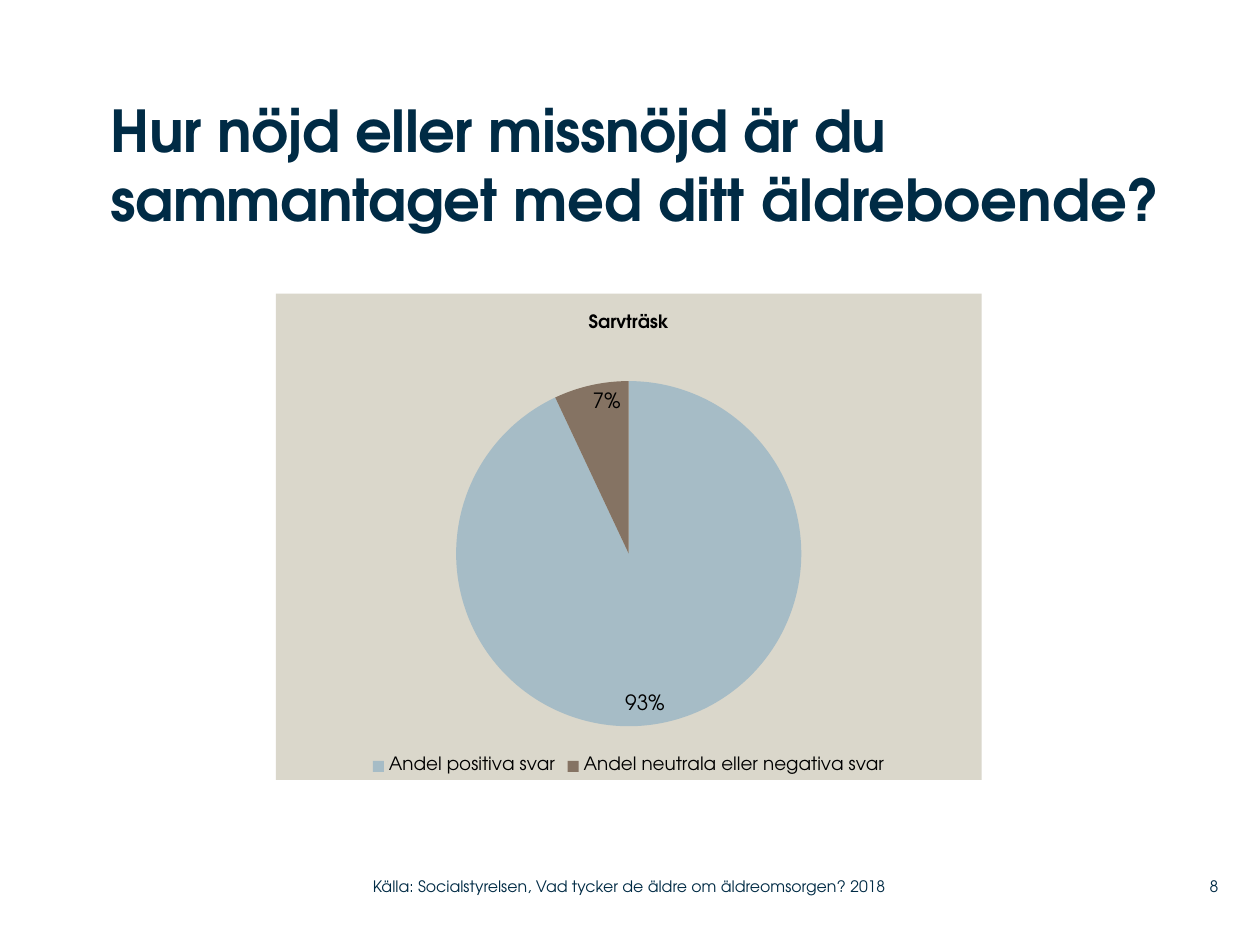
"""Build the slide on overall satisfaction with the care home."""
from dataclasses import dataclass

from lxml.etree import _Element
from pptx import Presentation
from pptx.chart.data import CategoryChartData
from pptx.dml.color import RGBColor
from pptx.enum.chart import XL_CHART_TYPE, XL_LABEL_POSITION, XL_LEGEND_POSITION
from pptx.enum.text import MSO_ANCHOR, MSO_AUTO_SIZE, PP_ALIGN
from pptx.oxml import parse_xml
from pptx.oxml.ns import nsdecls
from pptx.util import Inches, Pt

FONT = "TeX Gyre Adventor"
NAVY = RGBColor(0x00, 0x2B, 0x45)
BLACK = RGBColor(0x00, 0x00, 0x00)
BLUE = RGBColor(0xA6, 0xBC, 0xC6)
BROWN = RGBColor(0x85, 0x73, 0x63)
SAND = RGBColor(0xDA, 0xD7, 0xCB)


@dataclass
class Answer:
    label: str
    share: int
    color: RGBColor


@dataclass
class FooterItem:
    text: str
    left: float
    width: float
    align: PP_ALIGN


ANSWERS = [
    Answer("Andel positiva svar", 93, BLUE),
    Answer("Andel neutrala eller negativa svar", 7, BROWN),
]
FOOTER = [
    FooterItem("8", 9.2, 0.47, PP_ALIGN.RIGHT),
    FooterItem("Källa: Socialstyrelsen, Vad tycker de äldre om äldreomsorgen? 2018",
               2.96, 4.43, PP_ALIGN.LEFT),
]


def format_font(font, size: float, color: RGBColor, bold: bool = False) -> None:
    font.name = FONT
    font.size = Pt(size)
    font.bold = bold
    font.color.rgb = color


def add_run(p, text: str, *, size: float, color: RGBColor = NAVY,
            bold: bool = False, spacing: int = 0) -> None:
    r = p.add_run()
    r.text = text
    format_font(r.font, size, color, bold)
    if spacing:
        r.font._element.set("spc", str(spacing))


def prepare_frame(tf, anchor: MSO_ANCHOR, align: PP_ALIGN):
    tf.word_wrap = True
    tf.auto_size = MSO_AUTO_SIZE.NONE
    tf.margin_left = tf.margin_right = tf.margin_top = tf.margin_bottom = 0
    tf.vertical_anchor = anchor
    p = tf.paragraphs[0]
    p.alignment = align
    return p


def add_title(s) -> None:
    sp = s.shapes.title
    sp.left, sp.top = Inches(0.88), Inches(0.75)
    sp.width, sp.height = Inches(8.83), Inches(1.42)
    p = prepare_frame(sp.text_frame, MSO_ANCHOR.TOP, PP_ALIGN.LEFT)
    add_run(p, "Hur nöjd eller missnöjd är du sammantaget ",
            size=33, bold=True, spacing=-30)
    add_run(p, "med ditt äldreboende?", size=33, bold=True)


def add_footer(s, item: FooterItem) -> None:
    sp = s.shapes.add_textbox(Inches(item.left), Inches(6.89),
                              Inches(item.width), Inches(0.29))
    p = prepare_frame(sp.text_frame, MSO_ANCHOR.MIDDLE, item.align)
    add_run(p, item.text, size=9)


def plot_layout(x: float, y: float, w: float, h: float) -> _Element:
    return parse_xml(
        f'<c:layout {nsdecls("c")}><c:manualLayout><c:layoutTarget val="inner"/>'
        '<c:xMode val="edge"/><c:yMode val="edge"/>'
        f'<c:x val="{x}"/><c:y val="{y}"/><c:w val="{w}"/><c:h val="{h}"/>'
        '</c:manualLayout></c:layout>')


def chart_background(color: RGBColor) -> _Element:
    return parse_xml(
        f'<c:spPr {nsdecls("c", "a")}><a:solidFill><a:srgbClr val="{color}"/>'
        '</a:solidFill><a:ln><a:noFill/></a:ln></c:spPr>')


def add_pie(s, answers: list[Answer]) -> None:
    data = CategoryChartData()
    data.categories = [a.label for a in answers]
    data.add_series("Series 1", [a.share for a in answers])
    chart = s.shapes.add_chart(XL_CHART_TYPE.PIE, Inches(2.19), Inches(2.33),
                               Inches(5.6), Inches(3.86), data).chart
    format_font(chart.font, 18, BLACK)

    chart.has_title = True
    add_run(chart.chart_title.text_frame.paragraphs[0], "Sarvträsk",
            size=10.5, color=BLACK, bold=True)
    chart.chart_title.include_in_layout = False

    chart.has_legend = True
    chart.legend.position = XL_LEGEND_POSITION.BOTTOM
    chart.legend.include_in_layout = False
    format_font(chart.legend.font, 10.5, BLACK)

    plot = chart.plots[0]
    plot.vary_by_categories = True
    for i, answer in enumerate(answers):
        fill = plot.series[0].points[i].format.fill
        fill.solid()
        fill.fore_color.rgb = answer.color

    labels = plot.series[0].data_labels
    labels.show_percentage = True
    labels.show_value = False
    labels.number_format = "0%"
    labels.number_format_is_linked = False
    labels.position = XL_LABEL_POSITION.INSIDE_END
    format_font(labels.font, 12, BLACK)

    space = chart._chartSpace
    area = space.chart.plotArea
    for layout in area.xpath("c:layout"):
        area.remove(layout)
    area.insert(0, plot_layout(0.25, 0.18, 0.5, 0.71))
    space.chart.addnext(chart_background(SAND))


def main() -> None:
    prs = Presentation()
    prs.slide_width, prs.slide_height = Inches(10), Inches(7.5)
    s = prs.slides.add_slide(prs.slide_layouts[5])
    for item in FOOTER:
        add_footer(s, item)
    add_title(s)
    add_pie(s, ANSWERS)
    prs.save("out.pptx")


if __name__ == "__main__":
    main()
